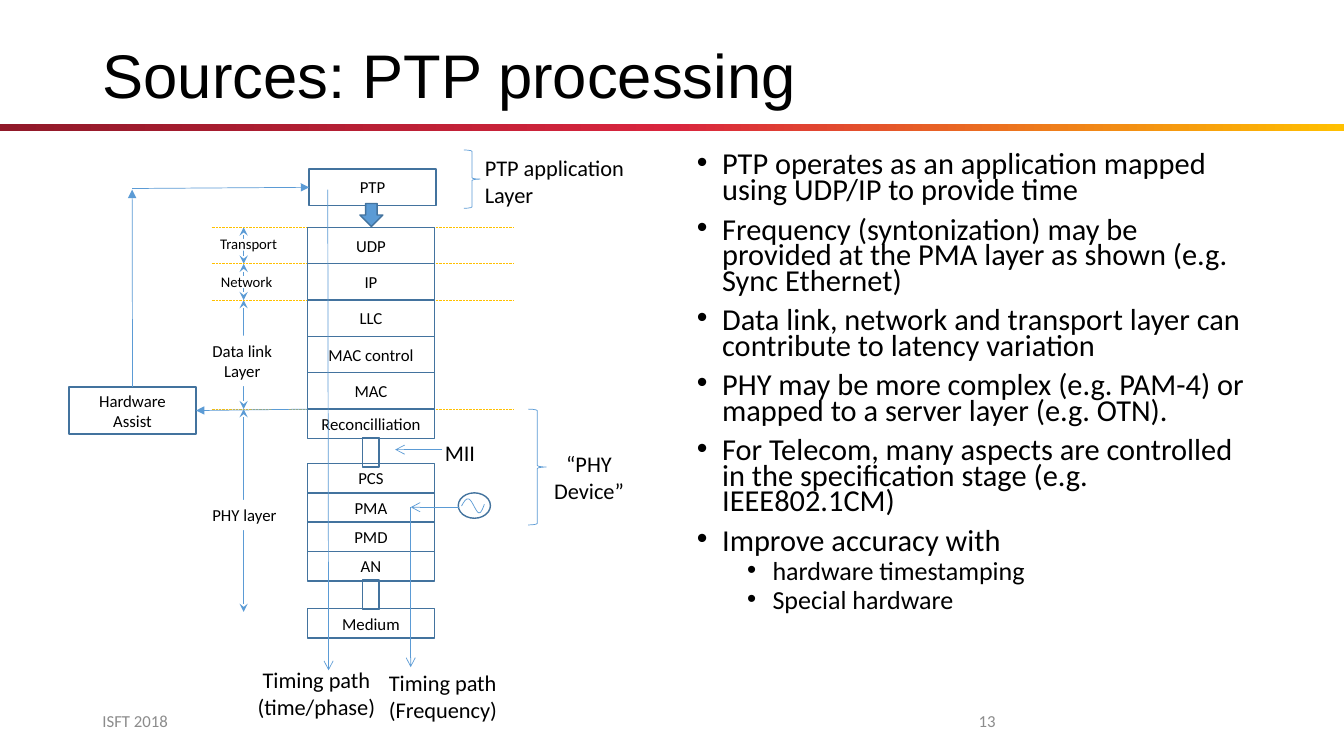
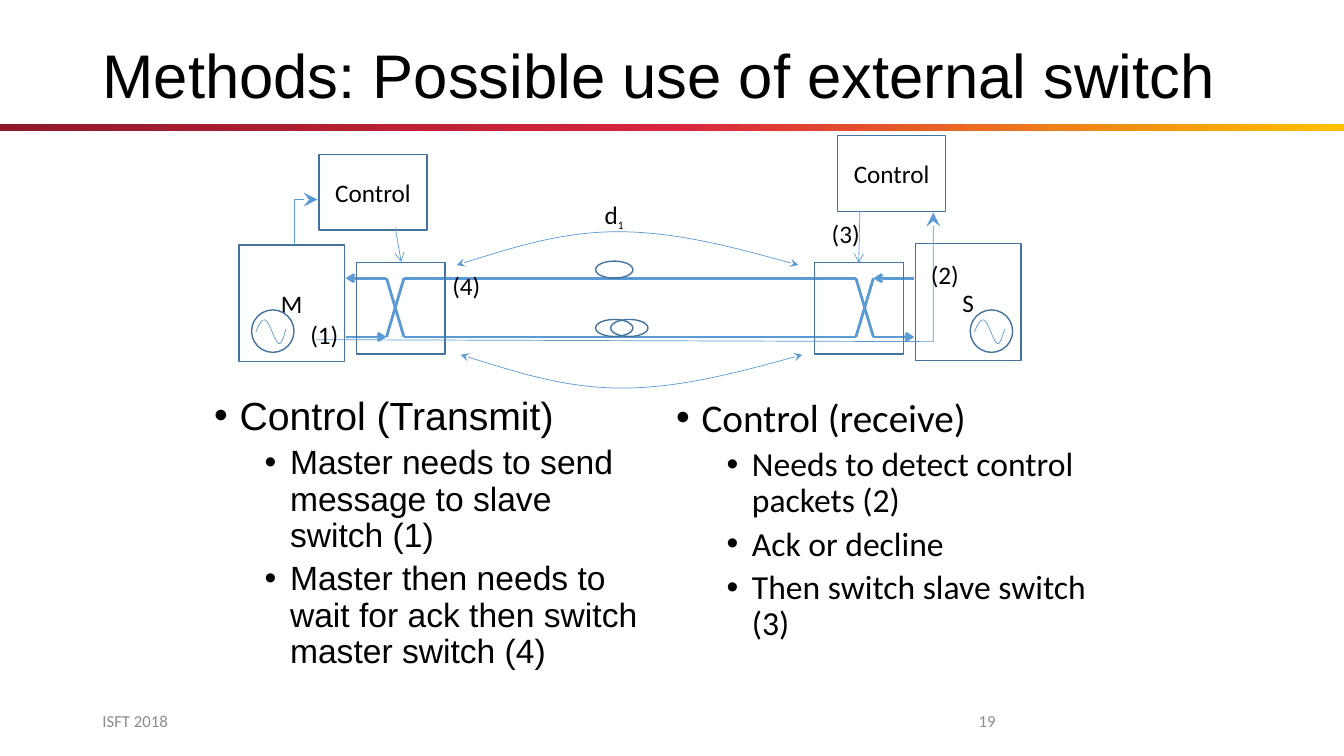
"""Build two slides on PTP timing: protocol stack processing and external switch control."""
import copy
import typing
from dataclasses import dataclass

import lxml.etree
import pptx
import pptx.dml.color
import pptx.enum.dml
import pptx.enum.shapes
import pptx.enum.text
import pptx.oxml.ns
import pptx.presentation
import pptx.shapes.autoshape
import pptx.shapes.connector
import pptx.shapes.shapetree
import pptx.slide
import pptx.text.text
import pptx.util

Cm = pptx.util.Cm
Pt = pptx.util.Pt
qn = pptx.oxml.ns.qn
Preset = pptx.enum.shapes.MSO_SHAPE
Align = pptx.enum.text.PP_ALIGN
Anchor = pptx.enum.text.MSO_ANCHOR
Canvas = typing.Union[pptx.shapes.shapetree.SlideShapes, pptx.shapes.shapetree.GroupShapes]
Point = tuple[float, float]

COLORS = {"text": "000000", "footer": "8C8C8C", "outline": "43739E", "accent": "5B9BD5",
          "boundary": "FFC000", "paper": "FFFFFF"}
BAND = {0.0: "901929", 0.5: "D9253E", 1.0: "FFC000"}
WIDTH, HEIGHT = 33.87, 19.05
WAVE = [(0.1, 0.52), (0.17, 0.36), (0.24, 0.19), (0.33, 0.24), (0.43, 0.29),
        (0.55, 0.76), (0.64, 0.79), (0.71, 0.83), (0.79, 0.52), (0.81, 0.45)]
DELAY_ARC = [(0, 0), (1.32, 0.41), (2.64, 0.84), (4.06, 0.84), (5.51, 0.84), (7.06, 0.43), (8.61, 0)]


@dataclass(frozen=True)
class Box:
    x: float
    y: float
    w: float
    h: float

    def lengths(self) -> list[pptx.util.Length]:
        return [Cm(value) for value in (self.x, self.y, self.w, self.h)]


@dataclass(frozen=True)
class Label:
    lines: list[str]
    box: Box
    size: float = 16
    align: Align = Align.LEFT
    color: str = "text"
    anchor: Anchor = Anchor.TOP
    wrap: bool = False


@dataclass(frozen=True)
class Wire:
    start: Point
    end: Point
    head: str = ""
    tail: str = ""
    width: float = 0.5
    color: str = "accent"
    dotted: bool = False


@dataclass(frozen=True)
class Bullet:
    text: str
    level: int = 0


def rgb(value: str) -> pptx.dml.color.RGBColor:
    return pptx.dml.color.RGBColor.from_string(value)


def add_run(paragraph: pptx.text.text._Paragraph, text: str, size: float,
            color: str = "text", font: str = "Calibri") -> None:
    run = paragraph.add_run()
    run.text = text
    run.font.size = Pt(size)
    run.font.name = font
    run.font.color.rgb = rgb(COLORS[color])


def write(frame: pptx.text.text.TextFrame, lines: list[str], size: float,
          align: Align = Align.CENTER, color: str = "text") -> None:
    for index, line in enumerate(lines):
        paragraph = frame.add_paragraph() if index else frame.paragraphs[0]
        paragraph.alignment = align
        add_run(paragraph, line, size, color)


def add_label(canvas: Canvas, label: Label) -> pptx.shapes.autoshape.Shape:
    textbox = canvas.add_textbox(*label.box.lengths())
    textbox.text_frame.word_wrap = label.wrap
    textbox.text_frame.vertical_anchor = label.anchor
    write(textbox.text_frame, label.lines, label.size, label.align, label.color)
    return textbox


def add_block(canvas: Canvas, box: Box, lines: typing.Sequence[str] = (), size: float = 12,
              preset: Preset = Preset.RECTANGLE, line: str = "outline", weight: float = 1,
              fill: str = "") -> pptx.shapes.autoshape.Shape:
    block = canvas.add_shape(preset, *box.lengths())
    block.shadow.inherit = False
    if fill:
        block.fill.solid()
        block.fill.fore_color.rgb = rgb(COLORS[fill])
    else:
        block.fill.background()
    if line:
        block.line.color.rgb = rgb(COLORS[line])
        block.line.width = Pt(weight)
    else:
        block.line.fill.background()
    write(block.text_frame, list(lines), size)
    return block


def add_ends(element: lxml.etree.ElementBase, head: str, tail: str, size: str = "med") -> None:
    outline = element.spPr.find(qn("a:ln"))
    for tag, kind in (("a:headEnd", head), ("a:tailEnd", tail)):
        if kind:
            lxml.etree.SubElement(outline, qn(tag), type=kind, w=size, len=size)


def add_wire(canvas: Canvas, wire: Wire) -> pptx.shapes.connector.Connector:
    connector = canvas.add_connector(pptx.enum.shapes.MSO_CONNECTOR.STRAIGHT,
                                     *[Cm(value) for value in (*wire.start, *wire.end)])
    connector.line.color.rgb = rgb(COLORS[wire.color])
    connector.line.width = Pt(wire.width)
    if wire.dotted:
        connector.line.dash_style = pptx.enum.dml.MSO_LINE.ROUND_DOT
    add_ends(connector.element, wire.head, wire.tail)
    lxml.etree.SubElement(connector.element.spPr, qn("a:effectLst"))
    return connector


def add_trace(canvas: Canvas, points: list[Point], head: str = "", tail: str = "",
              size: str = "med", curved: bool = False) -> None:
    corners = [(Cm(x), Cm(y)) for x, y in points]
    builder = canvas.build_freeform(*corners[0])
    builder.add_line_segments(corners[1:], close=False)
    trace = builder.convert_to_shape()
    trace.shadow.inherit = False
    trace.fill.background()
    trace.line.color.rgb = rgb(COLORS["accent"])
    trace.line.width = Pt(0.5)
    add_ends(trace.element, head, tail, size)
    if curved:
        bend_segments(trace.element)


def bend_segments(element: lxml.etree.ElementBase) -> None:
    segments = element.spPr.findall(".//" + qn("a:lnTo"))
    for first in range(0, len(segments), 3):
        curve = lxml.etree.Element(qn("a:cubicBezTo"))
        segments[first].addprevious(curve)
        for segment in segments[first:first + 3]:
            curve.append(segment[0])
            segment.getparent().remove(segment)


def add_oscillator(slide: pptx.slide.Slide, box: Box) -> None:
    oscillator = slide.shapes.add_group_shape().shapes
    add_trace(oscillator, [(box.x + x * box.w, box.y + y * box.h) for x, y in WAVE], curved=True)
    add_block(oscillator, box, preset=Preset.OVAL)


def add_bullets(slide: pptx.slide.Slide, box: Box, bullets: list[Bullet], sizes: tuple[float, float],
                spacing: float = 0.9, font: str = "Calibri") -> None:
    frame = slide.shapes.add_textbox(*box.lengths()).text_frame
    frame.word_wrap = True
    for index, bullet in enumerate(bullets):
        paragraph = frame.add_paragraph() if index else frame.paragraphs[0]
        paragraph.level = bullet.level
        properties = paragraph._p.get_or_add_pPr()
        properties.set("marL", str(Cm(0.64 + 1.27 * bullet.level)))
        properties.set("indent", str(Cm(-0.64)))
        lxml.etree.SubElement(properties, qn("a:buFont"), typeface="Arial")
        lxml.etree.SubElement(properties, qn("a:buChar"), char="•")
        paragraph.line_spacing = spacing
        paragraph.space_before = Pt((5 if bullet.level else 10) if index else 0)
        add_run(paragraph, bullet.text, sizes[bullet.level], font=font)


def start_slide(deck: pptx.presentation.Presentation, heading: str, number: int) -> pptx.slide.Slide:
    slide = deck.slides.add_slide(deck.slide_layouts[5])
    band = add_block(slide.shapes, Box(0, 3.12, WIDTH, 0.18), line="")
    band.fill.gradient()
    band.fill.gradient_angle = 0
    stops = band.element.spPr.find(".//" + qn("a:gsLst"))
    stops.append(copy.deepcopy(stops[0]))
    for stop, (position, color) in zip(band.fill.gradient_stops, BAND.items()):
        stop.position = position
        stop.color.rgb = rgb(color)

    title = slide.shapes.title
    title.left, title.top, title.width, title.height = Box(2.33, 0.41, 29.21, 3.12).lengths()
    title.text_frame.vertical_anchor = Anchor.MIDDLE
    title.text_frame.auto_size = pptx.enum.text.MSO_AUTO_SIZE.NONE
    paragraph = title.text_frame.paragraphs[0]
    paragraph.alignment = Align.LEFT
    paragraph.line_spacing = 0.9
    add_run(paragraph, heading, 44, font="Arial")

    for text, x, width, align in (("ISFT 2018", 2.33, 7.62, Align.LEFT),
                                  (str(number), 23.92, 1.42, Align.RIGHT)):
        add_label(slide.shapes, Label([text], Box(x, 17.65, width, 1.02), 12, align,
                                      "footer", Anchor.MIDDLE, True))
    return slide


def build_processing(deck: pptx.presentation.Presentation) -> None:
    slide = start_slide(deck, "Sources: PTP processing", 13)
    shapes = slide.shapes
    left, width, top, phy_top, short = 7.75, 3.2, 5.73, 10.31, 0.74
    tall = (phy_top - top) / 5
    boundaries = [top + count * tall for count in (0, 1, 2, 5)]

    for upper, lower in zip(boundaries, boundaries[1:] + [15.42]):
        add_wire(shapes, Wire((6.14, upper), (6.14, lower), "stealth", "stealth"))
    for y in boundaries:
        add_wire(shapes, Wire((5.33, y), (12.95, y), color="boundary", dotted=True))
    for cover in (Box(5.92, 6.02, 0.41, 0.3), Box(5.97, 6.96, 0.41, 0.3)):
        add_block(shapes, cover, line="", fill="paper")
    for lines, box in ((["Data link", "Layer"], Box(5.09, 8.46, 2.03, 1.27)),
                       (["PHY layer"], Box(5.08, 12.6, 2.16, 0.76))):
        caption = add_label(shapes, Label(lines, box, 12, Align.CENTER))
        caption.fill.solid()
        caption.fill.fore_color.rgb = rgb(COLORS["paper"])

    for row, layer in enumerate(("UDP", "IP", "LLC", "MAC control", "MAC")):
        add_block(shapes, Box(left, top + row * tall, width, tall), [layer])
    for row, layer in enumerate(("PCS", "PMA", "PMD", "AN")):
        add_block(shapes, Box(left, 11.68 + row * short, width, short), [layer])
    for layer, y in (("Reconcilliation", phy_top), ("Medium", 15.34)):
        add_block(shapes, Box(left, y, width, short), [layer])
    for y in (11.03, 14.62):
        add_block(shapes, Box(9.14, y, 0.41, short))
    ptp = add_block(shapes, Box(7.79, 4.26, width, 0.92), ["PTP"])
    assist = add_block(shapes, Box(1.74, 9.75, width, 1.19), ["Hardware", "Assist"])
    add_block(shapes, Box(9.07, 5.13, 0.58, 0.58), preset=Preset.DOWN_ARROW, fill="accent")
    for brace in (Box(13.31, phy_top, 0.46, 2.92), Box(11.69, 3.78, 0.41, 1.47)):
        add_block(shapes, brace, preset=Preset.RIGHT_BRACE, line="accent", weight=0.5)

    add_oscillator(slide, Box(11.55, 12.42, 0.81, 0.64))
    for start, end in (((11.15, 11.33), (9.96, 11.33)), ((11.56, 12.78), (10.35, 12.78)),
                       ((10.35, 12.78), (10.35, 16.81)), ((8.26, 4.78), (8.28, 16.89))):
        add_wire(shapes, Wire(start, end, tail="arrow"))
    timestamp = add_wire(shapes, Wire((left, phy_top), (4.94, 10.34), tail="triangle"))
    timestamp.end_connect(assist, 3)
    report = add_wire(shapes, Wire((3.34, 9.75), (3.33, 4.78), tail="triangle"))
    report.begin_connect(assist, 0)
    delivery = add_wire(shapes, Wire((3.33, 4.75), (7.79, 4.72), tail="triangle"))
    delivery.end_connect(ptp, 1)

    for label in (
        Label(["Network"], Box(5.21, 6.74, 2.01, 0.71), 10.5, Align.CENTER, wrap=True),
        Label(["Transport"], Box(5.26, 5.79, 2.01, 0.71), 10.5, Align.CENTER, wrap=True),
        Label(["MII"], Box(10.96, 10.95, 1.3, 0.94)),
        Label(["Timing path", "(Frequency)"], Box(9.55, 16.74, 3.28, 1.63)),
        Label(["Timing path", "(time/phase)"], Box(6.22, 16.66, 3.51, 1.63), align=Align.CENTER),
        Label(["“PHY", "Device”"], Box(13.69, 11.23, 2.31, 1.63), align=Align.CENTER),
        Label(["PTP application", "Layer"], Box(11.97, 3.76, 4.06, 1.63)),
    ):
        add_label(shapes, label)
    add_bullets(slide, Box(17.31, 3.77, 14.4, 12.09), [
        Bullet("PTP operates as an application mapped using UDP/IP to provide time"),
        Bullet("Frequency (syntonization) may be provided at the PMA layer as shown (e.g. Sync Ethernet)"),
        Bullet("Data link, network and transport layer can contribute to latency variation"),
        Bullet("PHY may be more complex (e.g. PAM-4) or mapped to a server layer (e.g. OTN)."),
        Bullet("For Telecom, many aspects are controlled in the specification stage (e.g. IEEE802.1CM)"),
        Bullet("Improve accuracy with"),
        Bullet("hardware timestamping", 1),
        Bullet("Special hardware", 1),
    ], (21.7, 18.6), 0.7)


def add_switch(canvas: Canvas, fibre: float, side: int, upper: float, lower: float) -> None:
    inner, outer = fibre + 1.04 * side, fibre + 1.48 * side
    near, far = sorted((outer, fibre + 2.51 * side))
    for start, end, tail in (
        ((fibre, upper), (inner, upper), ""), ((fibre, lower), (inner, lower), ""),
        ((inner, upper), (outer, lower), ""), ((inner, lower), (outer, upper), ""),
        ((far, upper), (near, upper), "arrow"), ((near, lower), (far, lower), "arrow"),
    ):
        add_wire(canvas, Wire(start, end, tail=tail, width=2))
    add_block(canvas, Box(min(fibre, fibre + 2.24 * side), 6.61, 2.24, 2.31))


def build_switch(deck: pptx.presentation.Presentation) -> None:
    slide = start_slide(deck, "Methods: Possible use of external switch", 19)
    shapes = slide.shapes
    upper, lower, west, east = 7.01, 8.49, 11.22, 20.53

    for name, x, y, height, width in (("M", 6.02, 6.17, 2.94, 2.66), ("S", 23.07, 6.14, 2.94, 2.66),
                                      ("Control", 8.04, 3.89, 1.91, 2.72),
                                      ("Control", 21.11, 3.42, 1.91, 2.72)):
        add_block(shapes, Box(x, y, width, height), [name], 18)
    for y in (upper, lower):
        add_wire(shapes, Wire((west, y), (east, y), width=2))
    for x, y in ((15.01, 6.58), (15.01, 8.05), (15.39, 8.05)):
        add_block(shapes, Box(x, y, 0.94, 0.43), preset=Preset.OVAL)
    for x, y, bend in ((11.51, 6.68, -1), (11.61, 8.94, 1)):
        arc = [(x + dx, y + bend * dy) for dx, dy in DELAY_ARC]
        add_trace(shapes, arc, "stealth", "stealth", curved=True)
    for x in (6.34, 24.45):
        add_oscillator(slide, Box(x, 7.81, 1.07, 1.07))
    add_switch(shapes, east, 1, upper, lower)
    add_switch(shapes.add_group_shape().shapes, west, -1, upper, lower)

    add_trace(shapes, [(7.98, 8.56), (23.52, 8.61), (23.52, 5.36)], tail="stealth", size="lg")
    add_trace(shapes, [(7.42, 6.17), (7.42, 5.03), (8, 5.03)], tail="stealth", size="lg")
    for start, end in (((21.67, 5.31), (21.64, 6.63)), ((9.96, 5.74), (10.11, 6.6))):
        add_wire(shapes, Wire(start, end, tail="arrow"))
    for step, x, y in ((1, 7.57, 7.92), (2, 23.21, 6.4), (3, 20.71, 5.38), (4, 11.15, 6.68)):
        add_label(shapes, Label([f"({step})"], Box(x, y, 1.22, 1.02), 18))
    delay = add_label(shapes, Label(["d"], Box(14.99, 4.91, 1.02, 1.02), 18))
    add_run(delay.text_frame.paragraphs[0], "1", 14)
    delay.element.findall(".//" + qn("a:rPr"))[-1].set("baseline", "-25000")

    add_bullets(slide, Box(5.15, 9.87, 11.23, 7.47), [
        Bullet("Control (Transmit)"),
        Bullet("Master needs to send message to slave switch (1)", 1),
        Bullet("Master then needs to wait for ack then switch master switch (4)", 1),
    ], (28, 24), font="Arial")
    add_bullets(slide, Box(16.79, 9.91, 11.23, 7.42), [
        Bullet("Control (receive)"),
        Bullet("Needs to detect control packets (2)", 1),
        Bullet("Ack or decline", 1),
        Bullet("Then switch slave switch (3)", 1),
    ], (28, 24))


def main() -> None:
    deck = pptx.Presentation()
    deck.slide_width, deck.slide_height = Cm(WIDTH), Cm(HEIGHT)
    build_processing(deck)
    build_switch(deck)
    deck.save("out.pptx")


if __name__ == "__main__":
    main()
